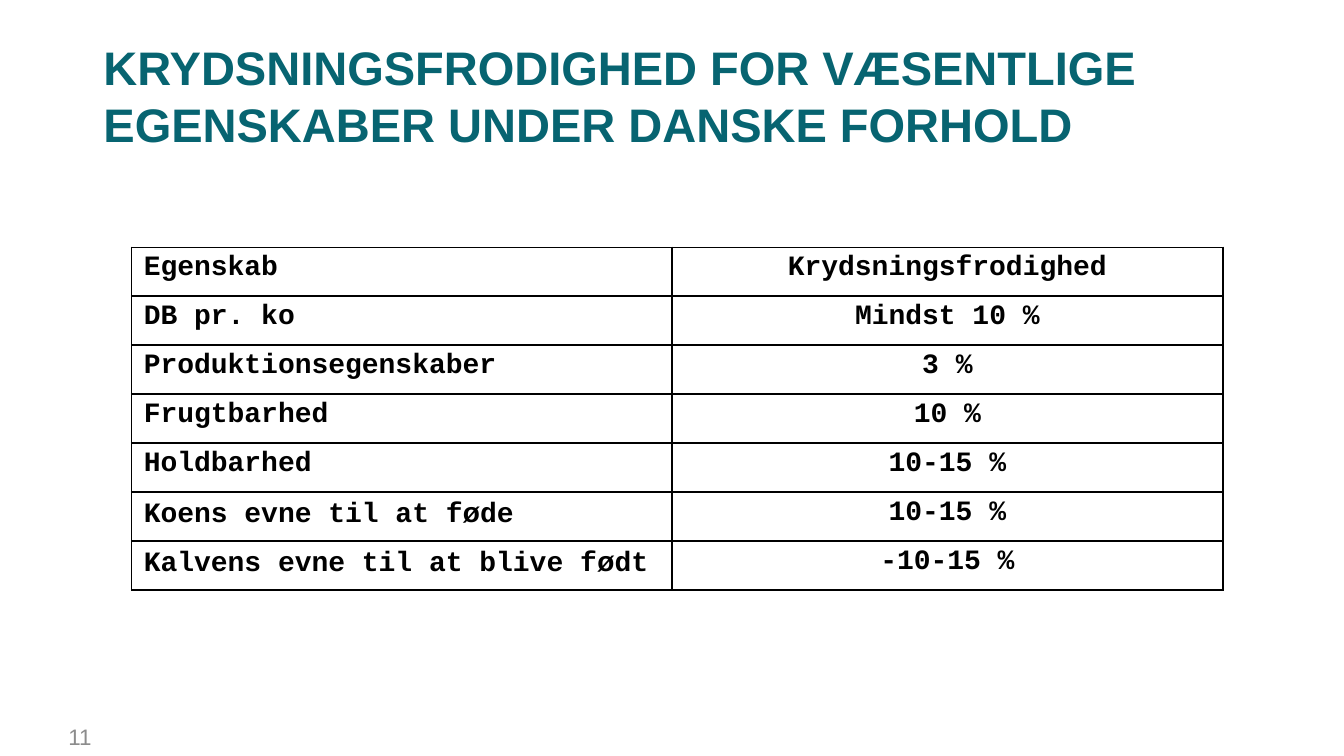
import pptx
import pptx.dml.color
import pptx.enum.text
import pptx.oxml
import pptx.oxml.ns
import pptx.util

Inches = pptx.util.Inches
Pt = pptx.util.Pt
ALIGN = pptx.enum.text.PP_ALIGN
ANCHOR = pptx.enum.text.MSO_ANCHOR


def rgb(value):
    return pptx.dml.color.RGBColor.from_string(value)


class Deck:
    """Holds the style and the current slide."""
    heading_font, table_font = "Arial", "Courier New"
    teal, grey, black = "076471", "8C8C8C", "000000"

    def __init__(self, width, height):
        self.prs = pptx.Presentation()
        self.prs.slide_width = Inches(width)
        self.prs.slide_height = Inches(height)
        self.s = self.prs.slides.add_slide(self.prs.slide_layouts[5])

    def run(self, p, text, font, size, color, bold=False):
        r = p.add_run()
        r.text = text
        r.font.name, r.font.size, r.font.bold = font, Pt(size), bold
        r.font.color.rgb = rgb(color)

    def title(self, text, left, top, width, height):
        sp = self.s.shapes.title
        sp.left, sp.top = Inches(left), Inches(top)
        sp.width, sp.height = Inches(width), Inches(height)
        tf = sp.text_frame
        tf.word_wrap = True
        tf.auto_size = pptx.enum.text.MSO_AUTO_SIZE.NONE
        tf.vertical_anchor = ANCHOR.BOTTOM
        tf.margin_bottom = Inches(0.26)
        p = tf.paragraphs[0]
        p.alignment = ALIGN.LEFT
        self.run(p, text, self.heading_font, 25.2, self.teal, True)

    def page_number(self, text, left, top, width, height):
        sp = self.s.shapes.add_textbox(Inches(left), Inches(top),
                                       Inches(width), Inches(height))
        tf = sp.text_frame
        tf.word_wrap = True
        tf.vertical_anchor = ANCHOR.MIDDLE
        p = tf.paragraphs[0]
        p.alignment = ALIGN.RIGHT
        self.run(p, text, self.heading_font, 12, self.grey)

    def borders(self, cell):
        tcPr = cell._tc.get_or_add_tcPr()
        for side in ("lnL", "lnR", "lnT", "lnB"):
            tcPr.append(pptx.oxml.parse_xml(
                f'<a:{side} {pptx.oxml.ns.nsdecls("a")} w="{Pt(1)}"><a:solidFill>'
                f'<a:srgbClr val="{self.black}"/></a:solidFill></a:{side}>'))

    def cell(self, cell, text, align):
        self.borders(cell)
        cell.fill.background()
        cell.margin_left = cell.margin_right = Inches(0.09)
        cell.margin_top = cell.margin_bottom = Inches(0.04)
        p = cell.text_frame.paragraphs[0]
        p.alignment = align
        # The letter ø is set in the heading font
        before, letter, after = text.partition("ø")
        for part, font in ((before, self.table_font), (letter, self.heading_font),
                           (after, self.table_font)):
            if part:
                self.run(p, part, font, 15, self.black, True)

    def table(self, rows, left, top, col_widths, row_height):
        frame = self.s.shapes.add_table(
            len(rows), len(col_widths), Inches(left), Inches(top),
            Inches(sum(col_widths)), Inches(row_height * len(rows)))
        table = frame.table
        table.first_row = table.horz_banding = False
        for column, width in zip(table.columns, col_widths):
            column.width = Inches(width)
        for i, row in enumerate(rows):
            table.rows[i].height = Inches(row_height)
            for j, (text, align) in enumerate(zip(row, (ALIGN.LEFT, ALIGN.CENTER))):
                self.cell(table.cell(i, j), text, align)


def main():
    # Widescreen, 16:9
    deck = Deck(10, 10 * 9 / 16)

    # Heading and page number
    deck.title("KRYDSNINGSFRODIGHED FOR VÆSENTLIGE EGENSKABER UNDER DANSKE FORHOLD",
               0.67, 0.45, 8.83, 0.94)
    deck.page_number("11", 0, 5.33, 0.78, 0.3)

    # Traits and their heterosis
    deck.table([
        ("Egenskab", "Krydsningsfrodighed"),
        ("DB pr. ko", "Mindst 10 %"),
        ("Produktionsegenskaber", "3 %"),
        ("Frugtbarhed", "10 %"),
        ("Holdbarhed", "10-15 %"),
        ("Koens evne til at føde", "10-15 %"),
        ("Kalvens evne til at blive født", "-10-15 %"),
    ], 0.98, 1.84, (4.02, 4.1), 2.55 / 7)

    deck.prs.save("out.pptx")


if __name__ == "__main__":
    main()
